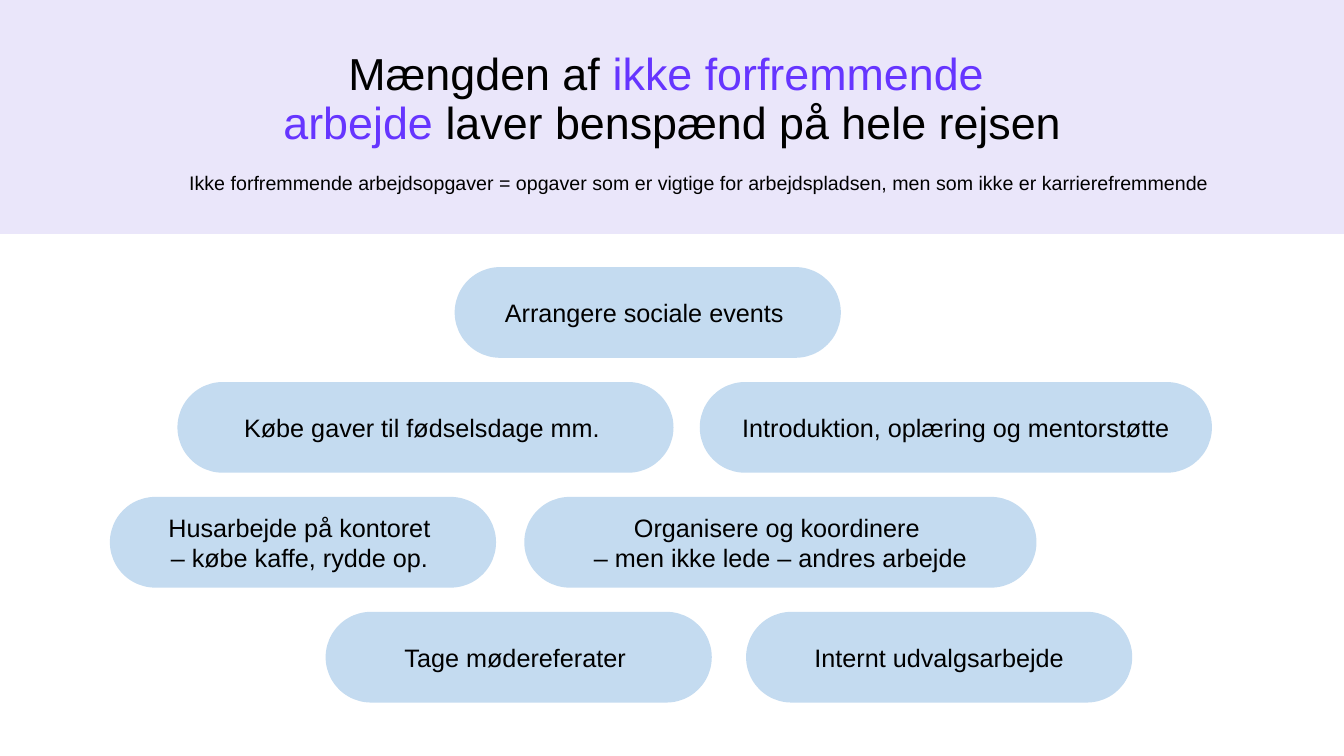
from pptx import Presentation
from pptx import util as u
from pptx.dml.color import RGBColor
from pptx.enum import shapes, text

BLACK, VIOLET, LILAC, BLUE = "000000", "6635FF", "EAE6FA", "C4DBF0"


def add_shape(kind, left, top, width, height, color):
    """Add a filled shape without outline or shadow; lengths in inches."""
    sp = s.shapes.add_shape(kind, *map(u.Inches, (left, top, width, height)))
    sp.shadow.inherit = False
    sp.fill.solid()
    sp.fill.fore_color.rgb = RGBColor.from_string(color)
    sp.line.fill.background()
    return sp


def write(p, words, size, color=BLACK):
    """Append words to a centred paragraph, turning newlines into line breaks."""
    p.alignment = text.PP_ALIGN.CENTER
    for i, line in enumerate(words.split("\n")):
        if i:
            p.add_line_break()
        r = p.add_run()
        r.text = line
        r.font.name = "Arial"
        r.font.size = u.Pt(size)
        r.font.color.rgb = RGBColor.from_string(color)


prs = Presentation()
prs.slide_width, prs.slide_height = u.Inches(13.33), u.Inches(7.5)
s = prs.slides.add_slide(prs.slide_layouts[5])

# Header band, placed behind the title
band = add_shape(shapes.MSO_SHAPE.RECTANGLE, 0, -0.02, 13.33, 2.34, LILAC)
s.shapes._spTree.insert(2, band._element)

title = s.shapes.title
title.left, title.top = u.Inches(0.92), u.Inches(0.27)
title.width, title.height = u.Inches(11.5), u.Inches(1.45)
tf = title.text_frame
tf.auto_size = text.MSO_AUTO_SIZE.NONE
tf.vertical_anchor = text.MSO_ANCHOR.MIDDLE
p = tf.paragraphs[0]
p.line_spacing = 0.9
write(p, "Mængden af ", 32)
write(p, "ikke forfremmende \narbejde ", 32, VIOLET)
write(p, "laver benspænd på hele rejsen", 32)

subtitle = s.shapes.add_textbox(u.Inches(0.54), u.Inches(1.65), u.Inches(12.79), u.Inches(0.34))
subtitle.text_frame.word_wrap = True
write(subtitle.text_frame.paragraphs[0],
      "Ikke forfremmende arbejdsopgaver = opgaver som er vigtige for "
      "arbejdspladsen, men som ikke er karrierefremmende", 14)

# Task pills: left, width and label, row by row
FIRST_TOP, ROW_PITCH, PILL_HEIGHT = 2.65, 1.14, 0.9
rows = [
    [(4.51, 3.83, "Arrangere sociale events ")],
    [(1.76, 4.92, "Købe gaver til fødselsdage mm. "),
     (6.94, 5.08, "Introduktion, oplæring og mentorstøtte")],
    [(1.09, 3.83, "Husarbejde på kontoret \n– købe kaffe, rydde op. "),
     (5.2, 5.08, "Organisere og koordinere \n– men ikke lede – andres arbejde")],
    [(3.23, 3.83, "Tage mødereferater "),
     (7.4, 3.83, "Internt udvalgsarbejde")],
]
for row, pills in enumerate(rows):
    for left, width, label in pills:
        pill = add_shape(shapes.MSO_SHAPE.ROUNDED_RECTANGLE, left,
                         FIRST_TOP + row * ROW_PITCH, width, PILL_HEIGHT, BLUE)
        pill.adjustments[0] = 0.5
        tf = pill.text_frame
        tf.word_wrap = True
        tf.vertical_anchor = text.MSO_ANCHOR.MIDDLE
        tf.margin_top = tf.margin_bottom = 0
        write(tf.paragraphs[0], label, 18)

prs.save("out.pptx")
